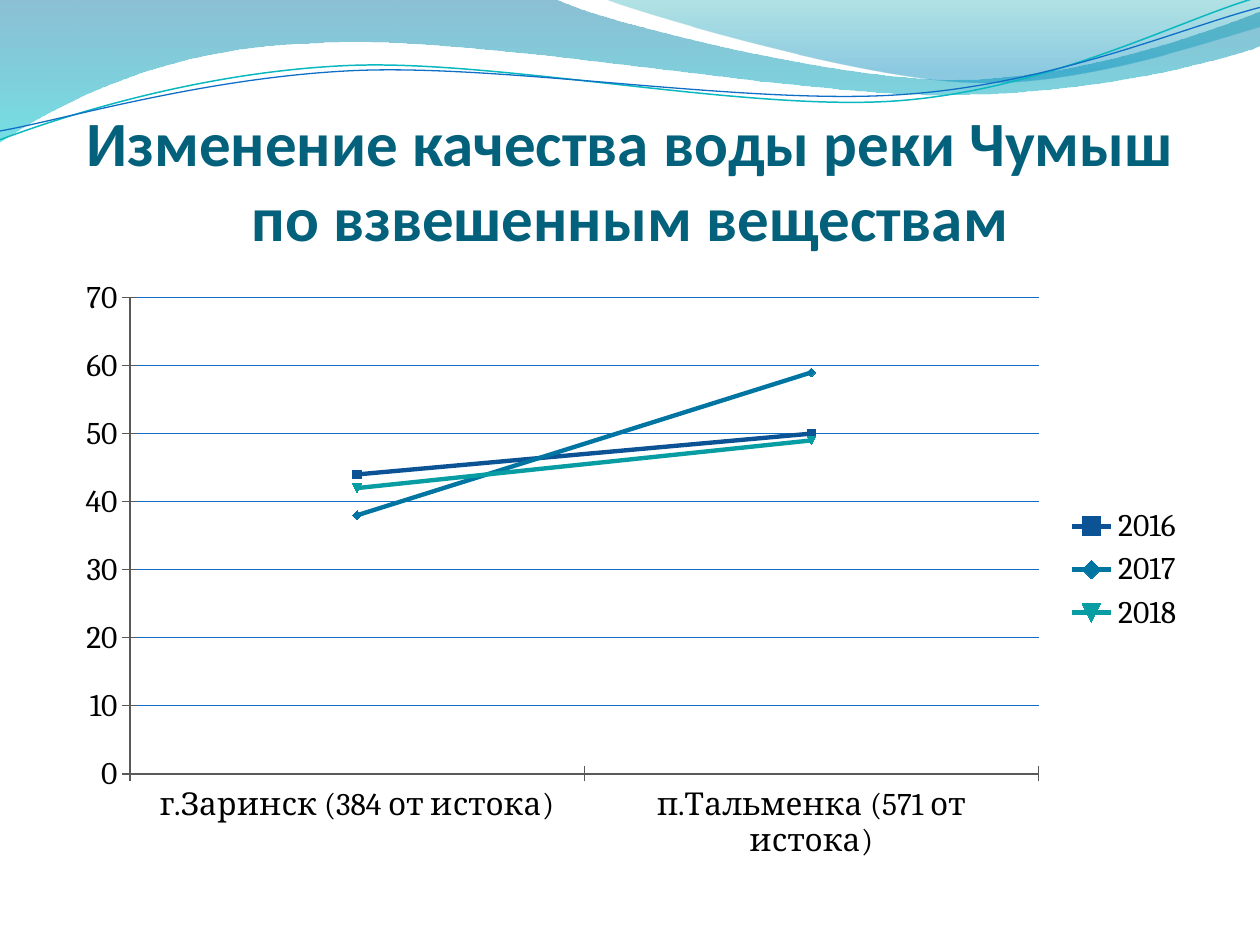
from math import cos, radians, sin

from lxml.etree import SubElement
from pptx import Presentation
from pptx.chart.data import CategoryChartData
from pptx.dml.color import RGBColor
from pptx.enum.chart import XL_CHART_TYPE, XL_LEGEND_POSITION, XL_TICK_MARK
from pptx.enum.text import MSO_ANCHOR, MSO_AUTO_SIZE, PP_ALIGN
from pptx.oxml.ns import qn
from pptx.util import Inches, Pt

TITLE_COLOR = RGBColor(0x04, 0x61, 0x7B)
BLACK = RGBColor(0, 0, 0)
GRID_BLUE = RGBColor(0x0F, 0x6F, 0xC6)
AXIS_GRAY = RGBColor(0x59, 0x59, 0x59)
LINE_TEAL = RGBColor(0x0A, 0xB8, 0xBF)
WAVE_BLUE = RGBColor(0x00, 0x74, 0xA1)
WAVE_CYAN = RGBColor(0x00, 0xC6, 0xCF)
CREST_TEAL = RGBColor(0x00, 0xA1, 0xA9)
CREST_BLUE = RGBColor(0x00, 0x8B, 0xBF)

LINE_TILT = -2.7  # degrees

CATEGORIES = ["г.Заринск (384 от истока)", "п.Тальменка (571 от истока)"]
SERIES = [
    ("2016", (44, 50), RGBColor(0x0B, 0x53, 0x94)),
    ("2017", (38, 59), RGBColor(0x00, 0x75, 0xA2)),
    ("2018", (42, 49), RGBColor(0x08, 0x9C, 0xA3)),
]

# A path is a list of parts in inches: six numbers are a cubic curve
# (two control points and an end), two numbers a straight line.
WAVE = [
    (0, 0), (4.4, -0.01), (4.76, 0.17, 6.64, 0.63, 7.58, 0.63),
    (8.53, 0.63, 9.58, 0.26, 10, 0.09), (10.01, 0.36),
    (9.83, 0.44, 8.7, 0.76, 7.46, 0.75), (6.22, 0.75, 3.82, 0.28, 2.57, 0.34),
    (1.29, 0.36, 0.46, 0.83, -0.01, 1.13),
]
CREST = [
    (4.79, -0.01), (5.09, 0.11, 6.82, 0.62, 7.69, 0.65),
    (8.56, 0.69, 9.61, 0.32, 10, 0.21), (10, 0),
]
TEAL_LINE = [
    (0, 1.11), (0.48, 0.93, 1.58, 0.57, 2.77, 0.52),
    (3.95, 0.47, 5.93, 0.89, 7.13, 0.8), (8.33, 0.71, 9.38, 0.15, 9.98, -0.02),
]
BLUE_LINE = [
    (0, 1.04), (0.47, 0.96, 1.64, 0.61, 2.83, 0.56),
    (4.03, 0.51, 5.97, 0.84, 7.17, 0.75), (8.36, 0.67, 9.41, 0.21, 10, 0.06),
]


def pairs(part):
    return list(zip(part[::2], part[1::2]))


def turned(path, degrees):
    """Turn a path clockwise about the middle between its two ends."""
    middle_x, middle_y = ((a + b) / 2 for a, b in zip(path[0], path[-1][-2:]))
    cosine, sine = cos(radians(degrees)), sin(radians(degrees))
    result = []
    for part in path:
        numbers = []
        for x, y in pairs(part):
            x, y = x - middle_x, y - middle_y
            numbers += [middle_x + x * cosine - y * sine,
                        middle_y + x * sine + y * cosine]
        result.append(numbers)
    return result


def add_outline(slide, path, close):
    """Add a freeform through all points, then join its triples into curves."""
    points = [(Inches(x), Inches(y)) for part in path for x, y in pairs(part)]
    builder = slide.shapes.build_freeform(*points[0])
    builder.add_line_segments(points[1:], close=close)
    shape = builder.convert_to_shape()
    shape.shadow.inherit = False
    segments = iter(list(shape.element.iter(qn("a:lnTo"))))
    for part in path[1:]:
        segment = next(segments)
        if len(part) == 6:
            curve = SubElement(segment.getparent(), qn("a:cubicBezTo"))
            segment.addprevious(curve)
            for line in (segment, next(segments), next(segments)):
                curve.append(line[0])
                line.getparent().remove(line)
    return shape


def add_wave(slide, path, stops):
    """Add a filled wave; each stop is position, colour and opacity in percent."""
    shape = add_outline(slide, path, close=True)
    shape.line.fill.background()
    shape.fill.gradient()
    shape.fill.gradient_angle = 270
    for stop, (position, color, opacity) in zip(shape.fill.gradient_stops, stops):
        stop.position = position
        stop.color.rgb = color
    gradient_colors = shape.element.spPr.iter(qn("a:srgbClr"))
    for node, (position, color, opacity) in zip(gradient_colors, stops):
        SubElement(node, qn("a:alpha"), val=str(opacity * 1000))


def add_wave_line(slide, path, color, width):
    shape = add_outline(slide, turned(path, -LINE_TILT), close=False)
    shape.rotation = LINE_TILT
    shape.fill.background()
    shape.line.color.rgb = color
    shape.line.width = Pt(width)


def add_header(slide):
    add_wave(slide, WAVE, [(0, WAVE_BLUE, 45), (1, WAVE_CYAN, 55)])
    add_wave(slide, CREST, [(0, CREST_TEAL, 30), (0.8, CREST_BLUE, 45)])
    add_wave_line(slide, TEAL_LINE, LINE_TEAL, 0.85)
    add_wave_line(slide, BLUE_LINE, GRID_BLUE, 0.75)


def place_title(slide, left, top, width, height):
    title = slide.shapes.title
    title.element.getparent().append(title.element)  # in front of the waves
    title.left, title.top, title.width, title.height = left, top, width, height
    frame = title.text_frame
    frame.text = "Изменение качества воды реки Чумыш по взвешенным веществам"
    frame.word_wrap = True
    frame.auto_size = MSO_AUTO_SIZE.NONE
    frame.vertical_anchor = MSO_ANCHOR.BOTTOM
    frame.margin_left = frame.margin_right = frame.margin_bottom = 0
    frame.margin_top = Inches(0.05)
    para = frame.paragraphs[0]
    para.alignment = PP_ALIGN.CENTER
    font = para.runs[0].font
    font.name, font.size, font.bold = "Calibri", Pt(36), True
    font.color.rgb = TITLE_COLOR


def add_quality_chart(slide, left, top, width, height):
    data = CategoryChartData()
    data.categories = CATEGORIES
    for name, values, color in SERIES:
        data.add_series(name, values)
    chart = slide.shapes.add_chart(
        XL_CHART_TYPE.LINE_MARKERS, left, top, width, height, data).chart
    chart.has_title = False
    chart.font.name, chart.font.size = "Cambria", Pt(18)
    chart.font.color.rgb = BLACK
    chart.has_legend = True
    chart.legend.position = XL_LEGEND_POSITION.RIGHT
    chart.legend.include_in_layout = False

    for axis in (chart.category_axis, chart.value_axis):
        axis.major_tick_mark = XL_TICK_MARK.CROSS
        axis.format.line.color.rgb = AXIS_GRAY
        axis.format.line.width = Pt(0.75)
    value_axis = chart.value_axis
    value_axis.minimum_scale, value_axis.maximum_scale = 0, 70
    value_axis.major_unit = 10
    grid_line = value_axis.major_gridlines.format.line
    grid_line.color.rgb = GRID_BLUE
    grid_line.width = Pt(0.75)

    chart.plots[0].vary_by_categories = False
    for series, (name, values, color) in zip(chart.plots[0].series, SERIES):
        series.smooth = False
        series.format.line.color.rgb = color
        series.format.line.width = Pt(2.5)
        series.marker.size = 5
        series.marker.format.fill.solid()
        series.marker.format.fill.fore_color.rgb = color
        series.marker.format.line.color.rgb = color


def main():
    deck = Presentation()
    deck.slide_width, deck.slide_height = Inches(10), Inches(7.5)
    slide = deck.slides.add_slide(deck.slide_layouts.get_by_name("Title Only"))
    add_header(slide)
    place_title(slide, Inches(0.5), Inches(0.77), Inches(9), Inches(1.25))
    add_quality_chart(slide, Inches(0.5), Inches(2.12), Inches(9), Inches(4.8))
    deck.save("out.pptx")


if __name__ == "__main__":
    main()
